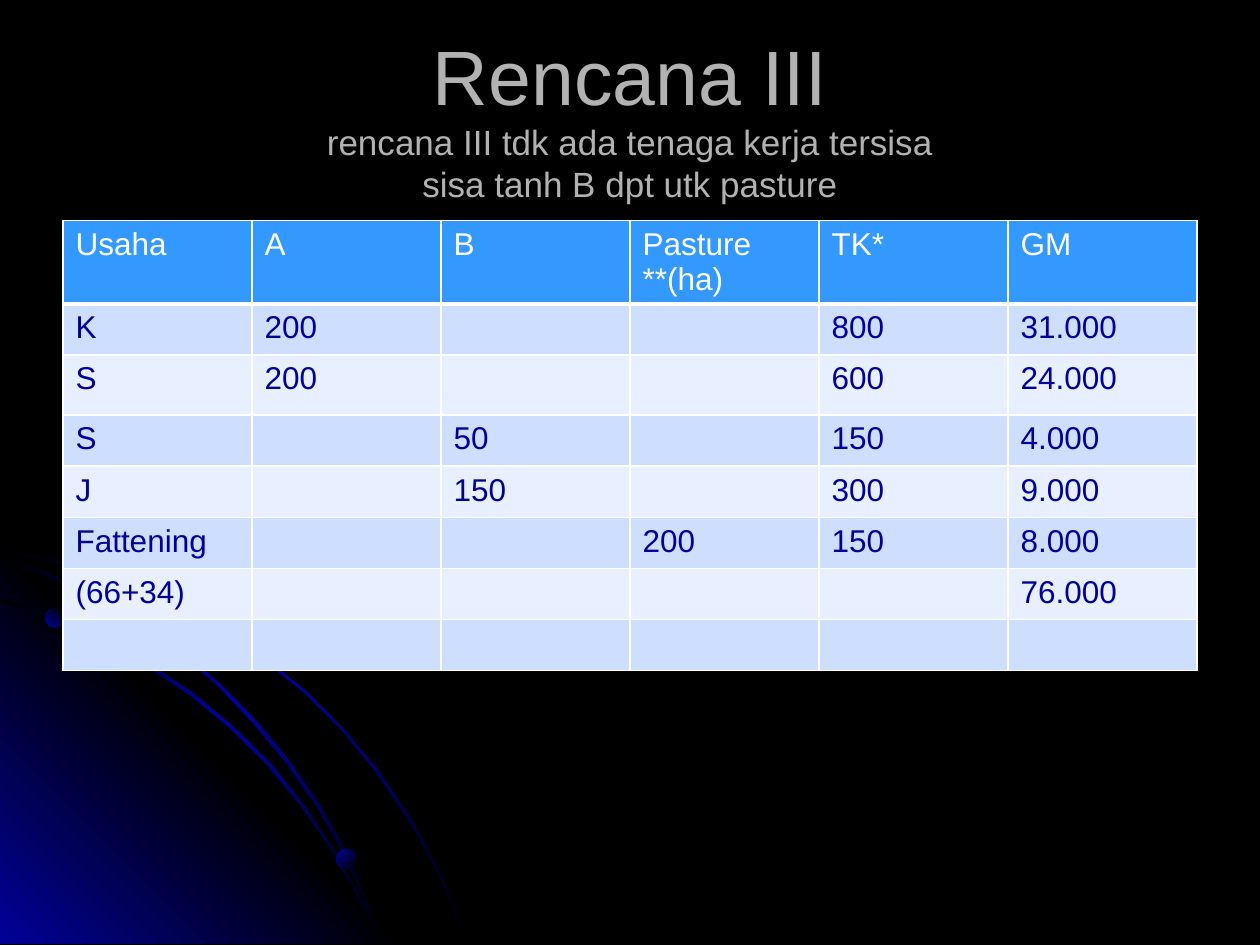
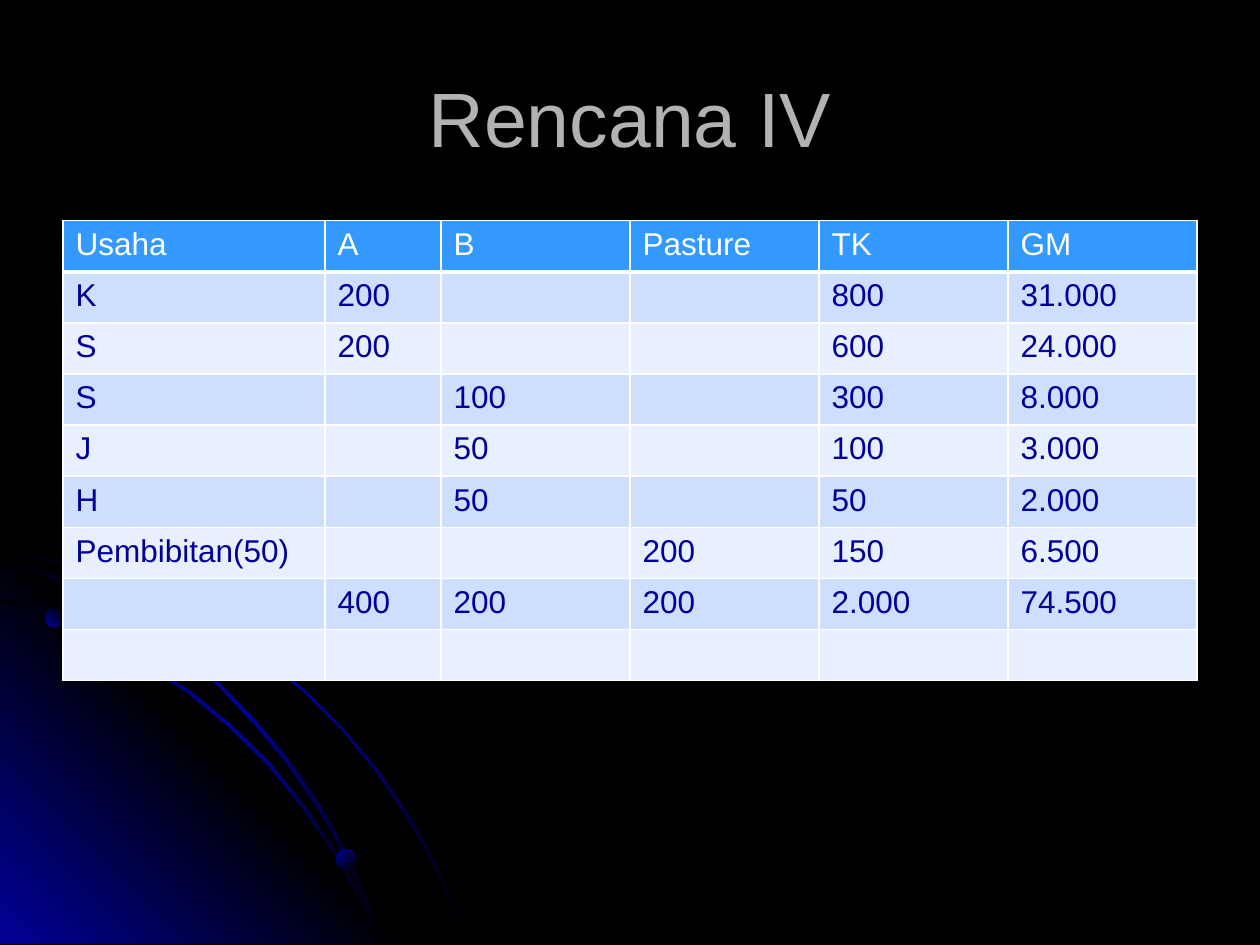
from copy import deepcopy
from typing import NamedTuple

from lxml.etree import SubElement
from pptx import Presentation
from pptx.dml.color import RGBColor
from pptx.enum.shapes import MSO_SHAPE
from pptx.enum.text import MSO_ANCHOR, MSO_AUTO_SIZE, PP_ALIGN
from pptx.oxml.ns import qn
from pptx.util import Cm, Pt


class Box(NamedTuple):
    left: float
    top: float
    width: float
    height: float

    def lengths(self):
        return [Cm(value) for value in self]


COLOURS = {
    "black": "000000",
    "blue": "010199",
    "title": "B2B2B2",
    "header": "3399FF",
    "odd": "CEDEFF",
    "even": "E8EFFF",
    "white": "FFFFFF",
}
FONT = "Arial"
PAGE = Box(0, 0, 25.4, 19.05)
TITLE = Box(1.27, 0.76, 22.86, 3.18)
TABLE = Box(1.27, 4.45, 22.86, 9.17)
ROW_HEIGHT = 1.03
EQUAL_COLUMNS = [3.81] * 6
WIDE_FIRST_COLUMN = [5.28, 2.34] + [3.81] * 4

OUTLINE_UNIT = Cm(2.54) / 100
GLOW_STOPS = ["blue", "black", "blue"]
RIBBON_STOPS = ["black", "blue", "black"]
DOT_STOPS = ["blue", "black"]

OUTER_RIBBON = [
    (57, 447), (28, 441), (0, 435), (0, 438), (28, 443), (56, 449), (97, 461),
    (135, 478), (173, 499), (208, 523), (241, 549), (271, 579), (298, 612),
    (323, 649), (337, 673), (350, 698), (360, 723), (370, 749), (372, 749),
    (362, 723), (352, 698), (339, 673), (325, 648), (300, 611), (272, 578),
    (242, 548), (209, 521), (174, 497), (136, 477), (98, 459),
]
CORNER_GLOW = [(322, 749), (0, 749), (0, 427)]
INNER_RIBBON = [
    (285, 714), (294, 732), (301, 749), (303, 749), (296, 730), (286, 712),
    (266, 676), (242, 640), (215, 606), (184, 576), (152, 549), (117, 526),
    (79, 505), (41, 488), (0, 475), (0, 477), (39, 490), (77, 507),
    (115, 528), (150, 551), (183, 578), (213, 608), (240, 641), (265, 677),
]
MIDDLE_RIBBON = [
    (0, 442), (0, 444), (36, 457), (74, 475), (109, 494), (142, 518),
    (173, 544), (202, 575), (227, 605), (252, 641), (267, 667), (280, 694),
    (292, 722), (301, 749), (303, 749), (294, 720), (282, 693), (269, 665),
    (254, 639), (229, 603), (204, 573), (175, 543), (144, 516), (111, 493),
    (76, 473), (39, 455),
]
OUTLINES = [
    (OUTER_RIBBON, RIBBON_STOPS, 45),
    (CORNER_GLOW, GLOW_STOPS, 315),
    (INNER_RIBBON, RIBBON_STOPS, 45),
    (MIDDLE_RIBBON, RIBBON_STOPS, 45),
]
DOTS = [
    (0.91, 12.27, 0.38, 315),
    (6.78, 17.12, 0.41, 45),
    (3.48, 12.01, 0.53, 315),
]

PLAN_THREE = [
    ("Usaha", "A", "B", "Pasture **(ha)", "TK*", "GM"),
    ("K", "200", "", "", "800", "31.000"),
    ("S", "200", "", "", "600", "24.000"),
    ("S", "", "50", "", "150", "4.000"),
    ("J", "", "150", "", "300", "9.000"),
    ("Fattening", "", "", "200", "150", "8.000"),
    ("(66+34)", "", "", "", "", "76.000"),
    ("", "", "", "", "", ""),
]
PLAN_FOUR = [
    ("Usaha", "A", "B", "Pasture", "TK", "GM"),
    ("K", "200", "", "", "800", "31.000"),
    ("S", "200", "", "", "600", "24.000"),
    ("S", "", "100", "", "300", "8.000"),
    ("J", "", "50", "", "100", "3.000"),
    ("H", "", "50", "", "50", "2.000"),
    ("Pembibitan(50)", "", "", "200", "150", "6.500"),
    ("", "400", "200", "200", "2.000", "74.500"),
    ("", "", "", "", "", ""),
]


def colour(name):
    return RGBColor.from_string(COLOURS[name])


def format_span(span, size, name):
    span.font.name = FONT
    span.font.size = Pt(size)
    span.font.bold = False
    span.font.color.rgb = colour(name)


def paint_gradient(shape, names, angle):
    shape.shadow.inherit = False
    shape.line.fill.background()
    shape.fill.gradient()
    shape.fill.gradient_angle = 360 - angle
    stop_list = shape._element.spPr.find(".//" + qn("a:gsLst"))
    while len(stop_list) < len(names):
        stop_list.append(deepcopy(stop_list[0]))
    for index, (stop, name) in enumerate(zip(shape.fill.gradient_stops, names)):
        stop.position = index / (len(names) - 1)
        stop.color.rgb = colour(name)


def add_corner_art(page, box):
    for points, names, angle in OUTLINES:
        builder = page.shapes.build_freeform(*points[0], scale=OUTLINE_UNIT)
        builder.add_line_segments(points[1:], close=True)
        outline = builder.convert_to_shape(Cm(box.left), Cm(box.top))
        paint_gradient(outline, names, angle)
    for left, top, size, angle in DOTS:
        place = Box(box.left + left, box.top + top, size, size)
        dot = page.shapes.add_shape(MSO_SHAPE.OVAL, *place.lengths())
        paint_gradient(dot, DOT_STOPS, angle)


def add_title(page, box, lines):
    title = page.shapes.title
    title.left, title.top, title.width, title.height = box.lengths()
    frame = title.text_frame
    frame.word_wrap = True
    frame.auto_size = MSO_AUTO_SIZE.NONE
    frame.vertical_anchor = MSO_ANCHOR.MIDDLE
    para = frame.paragraphs[0]
    para.text = "\n".join(lines)
    para.alignment = PP_ALIGN.CENTER
    for index, span in enumerate(para.runs):
        format_span(span, 20 if index else 44, "title")
    for line_break in para._p.findall(qn("a:br")):
        line_break.append(deepcopy(line_break.getprevious().find(qn("a:rPr"))))


def add_borders(cell, bottom):
    properties = cell._tc.get_or_add_tcPr()
    for index, (side, width) in enumerate(zip("LRTB", (1, 1, 1, bottom))):
        line = properties.makeelement(qn("a:ln" + side), {"w": str(Pt(width))})
        fill = SubElement(line, qn("a:solidFill"))
        SubElement(fill, qn("a:srgbClr"), val=COLOURS["white"])
        properties.insert(index, line)


def format_cell(cell, text, row_index):
    is_header = row_index == 0
    fill = "header" if is_header else "odd" if row_index % 2 else "even"
    cell.fill.solid()
    cell.fill.fore_color.rgb = colour(fill)
    add_borders(cell, 3 if is_header else 1)
    if text:
        cell.text_frame.text = text
        span = cell.text_frame.paragraphs[0].runs[0]
        format_span(span, 18, "white" if is_header else "blue")


def add_plan_table(page, box, rows, widths, taller_rows):
    table = page.shapes.add_table(len(rows), len(widths), *box.lengths()).table
    table.first_row = False
    table.horz_banding = False
    for column, width in zip(table.columns, widths):
        column.width = Cm(width)
    for row_index, values in enumerate(rows):
        row = table.rows[row_index]
        row.height = Cm(taller_rows.get(row_index, ROW_HEIGHT))
        for cell, text in zip(row.cells, values):
            format_cell(cell, text, row_index)


def add_plan_slide(deck, title_lines, rows, widths, taller_rows):
    page = deck.slides.add_slide(deck.slide_layouts.get_by_name("Title Only"))
    add_corner_art(page, PAGE)
    add_title(page, TITLE, title_lines)
    add_plan_table(page, TABLE, rows, widths, taller_rows)


def main():
    deck = Presentation()
    deck.slide_width, deck.slide_height = Cm(PAGE.width), Cm(PAGE.height)
    background = deck.slide_master.background.fill
    background.solid()
    background.fore_color.rgb = colour("black")
    title_lines = [
        "Rencana III",
        "rencana III tdk ada tenaga kerja tersisa",
        "sisa tanh B dpt utk pasture",
    ]
    add_plan_slide(deck, title_lines, PLAN_THREE, EQUAL_COLUMNS, {0: 1.67, 2: 1.21})
    add_plan_slide(deck, ["Rencana IV"], PLAN_FOUR, WIDE_FIRST_COLUMN, {})
    deck.save("out.pptx")


if __name__ == "__main__":
    main()
